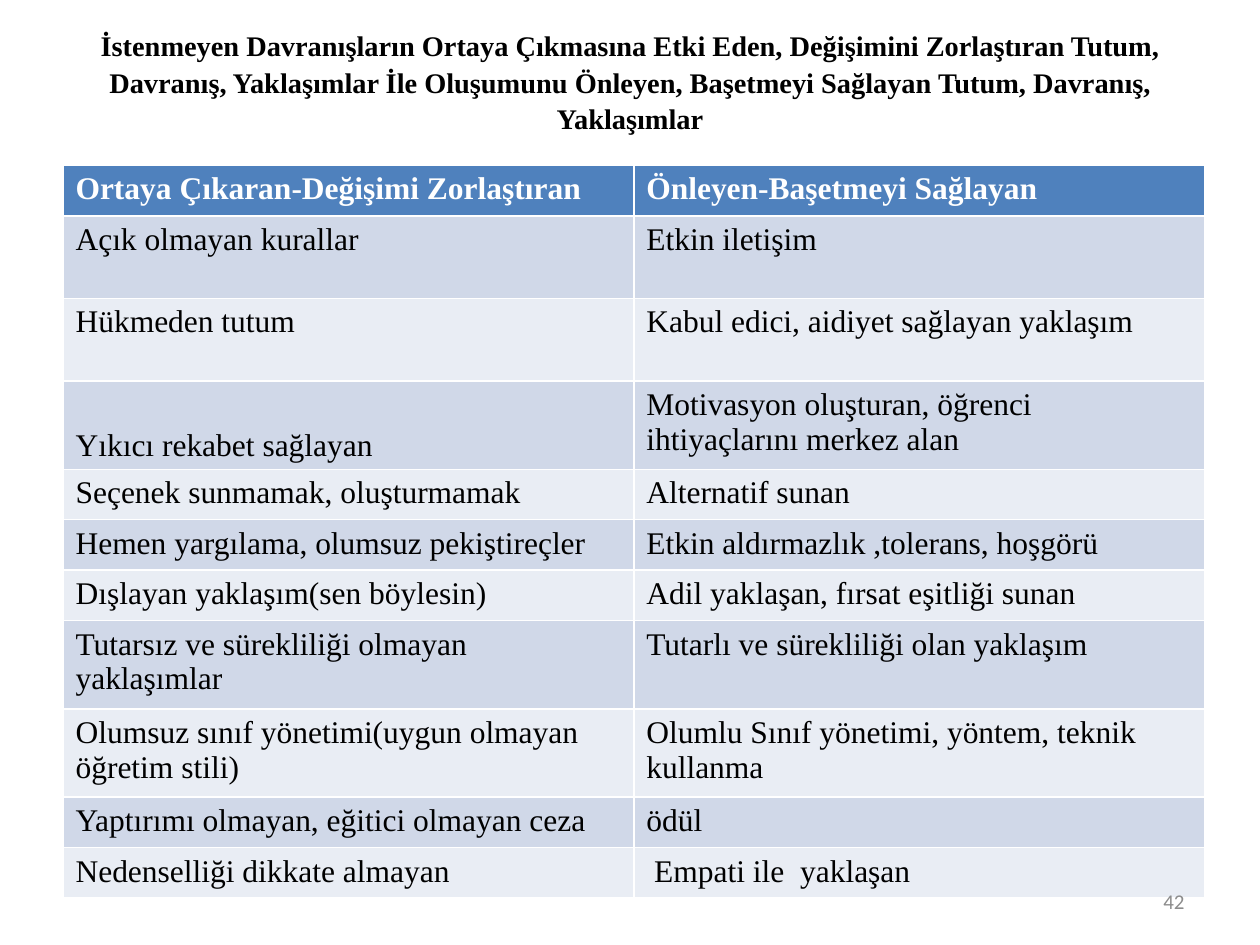
from pptx import Presentation
from pptx.dml.color import RGBColor
from pptx.enum import text
from pptx.util import Inches, Pt

COLOURS = {"header": "4F81BD", "odd": "D0D8E8", "even": "E9EDF4",
           "black": "000000", "white": "FFFFFF", "grey": "8C8C8C"}
SERIF, SANS = "Times New Roman", "Calibri"
WIDTH, HEIGHT = Inches(10), Inches(7.5)

TITLE = ("İstenmeyen Davranışların Ortaya Çıkmasına Etki Eden, Değişimini "
         "Zorlaştıran Tutum, Davranış, Yaklaşımlar İle Oluşumunu Önleyen, "
         "Başetmeyi Sağlayan Tutum, Davranış, Yaklaşımlar")
HEADINGS = ("Ortaya Çıkaran-Değişimi Zorlaştıran", "Önleyen-Başetmeyi Sağlayan")
# Each row: left text, right text, height in text lines
ROWS = [
    ("Açık olmayan kurallar", "Etkin iletişim", 2),
    ("Hükmeden tutum", "Kabul edici, aidiyet sağlayan yaklaşım", 2),
    ("Yıkıcı rekabet sağlayan",
     "Motivasyon oluşturan, öğrenci ihtiyaçlarını merkez alan", 2),
    ("Seçenek sunmamak, oluşturmamak", "Alternatif sunan", 1),
    ("Hemen yargılama, olumsuz pekiştireçler",
     "Etkin aldırmazlık ,tolerans, hoşgörü", 1),
    ("Dışlayan yaklaşım(sen böylesin)", "Adil yaklaşan, fırsat eşitliği sunan", 1),
    ("Tutarsız ve sürekliliği olmayan yaklaşımlar",
     "Tutarlı ve sürekliliği olan yaklaşım", 2),
    ("Olumsuz sınıf yönetimi(uygun olmayan öğretim stili)",
     "Olumlu Sınıf yönetimi, yöntem, teknik kullanma", 2),
    ("Yaptırımı olmayan, eğitici olmayan ceza", "ödül", 1),
    ("Nedenselliği dikkate almayan", " Empati ile  yaklaşan", 1),
]
BOTTOM_ALIGNED = "Yıkıcı rekabet sağlayan"
LINE, PADDING = Pt(20), Pt(7.2)


def share(left, top, width, height):
    """Turn shares of the slide's size into a box."""
    return (int(left * WIDTH), int(top * HEIGHT),
            int(width * WIDTH), int(height * HEIGHT))


def add_run(paragraph, words, size, colour, font=SERIF, bold=False):
    run = paragraph.add_run()
    run.text = words
    run.font.name, run.font.size, run.font.bold = font, Pt(size), bold
    run.font.color.rgb = RGBColor.from_string(COLOURS[colour])


def add_line_of_text(slide, box, alignment):
    """Place a vertically centred text box and return its paragraph."""
    frame = slide.shapes.add_textbox(*box).text_frame
    frame.word_wrap = True
    frame.vertical_anchor = text.MSO_ANCHOR.MIDDLE
    paragraph = frame.paragraphs[0]
    paragraph.alignment = alignment
    return paragraph


def add_title(slide, box):
    paragraph = add_line_of_text(slide, box, text.PP_ALIGN.CENTER)
    paragraph.line_spacing = 1.08
    add_run(paragraph, TITLE, 16.2, "black", bold=True)


def fill_cell(cell, words, fill, colour, bold=False):
    cell.fill.solid()
    cell.fill.fore_color.rgb = RGBColor.from_string(COLOURS[fill])
    add_run(cell.text_frame.paragraphs[0], words, 18, colour, bold=bold)
    if words == BOTTOM_ALIGNED:
        cell.vertical_anchor = text.MSO_ANCHOR.BOTTOM


def add_comparison(slide, box):
    table = slide.shapes.add_table(len(ROWS) + 1, len(HEADINGS), *box).table
    # Header row
    table.rows[0].height = LINE + PADDING
    for column, heading in enumerate(HEADINGS):
        fill_cell(table.cell(0, column), heading, "header", "white", bold=True)
    # Banded body rows
    for row, (*words, lines) in enumerate(ROWS, start=1):
        table.rows[row].height = lines * LINE + PADDING
        for column, entry in enumerate(words):
            fill_cell(table.cell(row, column), entry,
                      "odd" if row % 2 else "even", "black")


def add_page_number(slide, box):
    paragraph = add_line_of_text(slide, box, text.PP_ALIGN.RIGHT)
    add_run(paragraph, "42", 12, "grey", font=SANS)


def main():
    presentation = Presentation()
    presentation.slide_width, presentation.slide_height = WIDTH, HEIGHT
    slide = presentation.slides.add_slide(presentation.slide_layouts[6])
    add_title(slide, share(0.05, 0.04, 0.9, 0.09))
    add_comparison(slide, share(0.05, 0.175, 0.906, 0.74))
    add_page_number(slide, share(0.717, 0.927, 0.233, 0.053))
    presentation.save("out.pptx")


if __name__ == "__main__":
    main()
